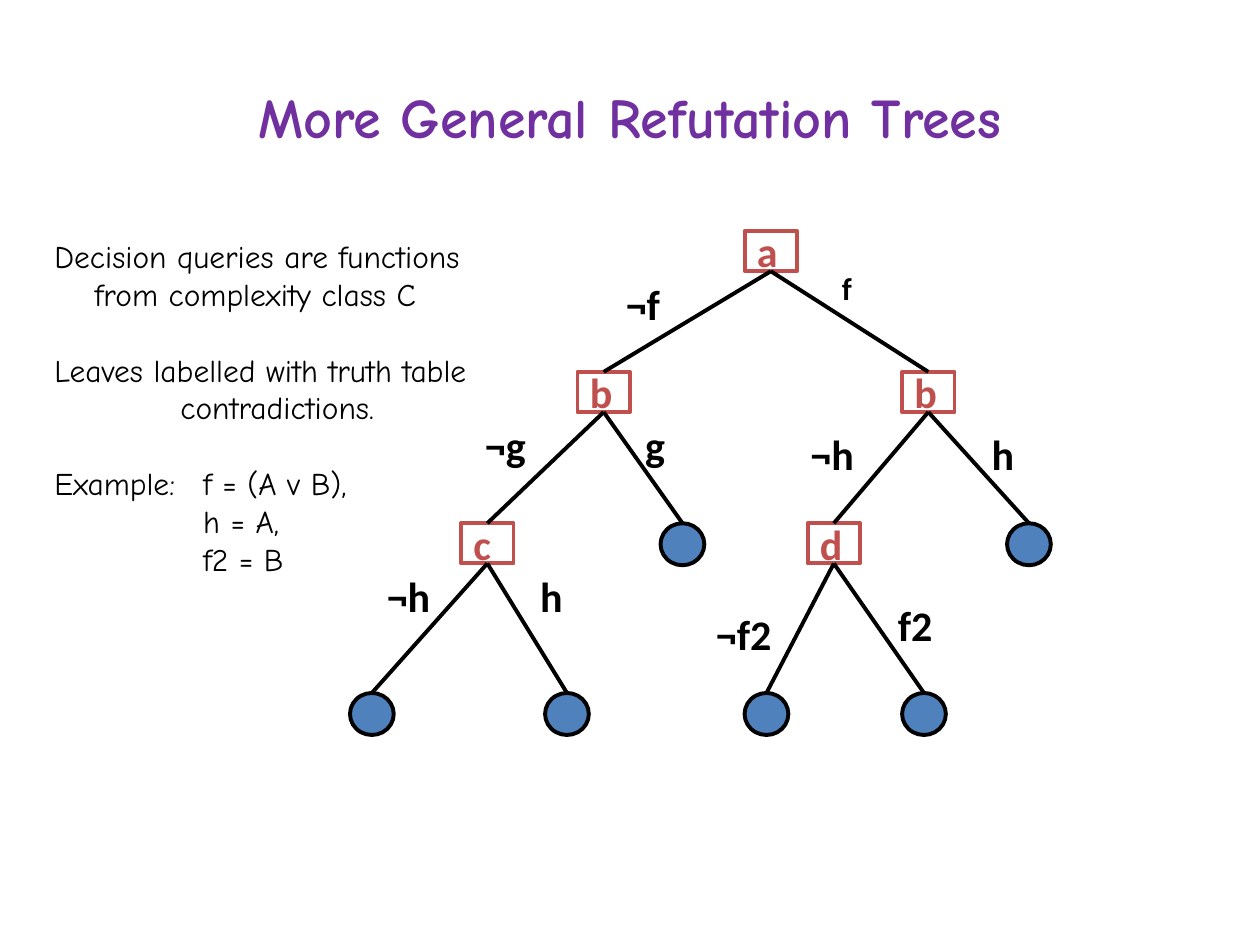
from pptx import Presentation
from pptx.dml.color import RGBColor
from pptx.enum.shapes import MSO_CONNECTOR, MSO_SHAPE
from pptx.enum.text import MSO_ANCHOR, PP_ALIGN
from pptx.oxml.ns import qn
from pptx.util import Pt
from lxml.etree import SubElement

BLACK, RED, BLUE, PURPLE, WHITE = "000000", "C0504D", "4F81BD", "7030A0", "FFFFFF"
HEADING, BODY = "Comic Neue", "Calibri"
LINE_WIDTH = 2.25
QUERY_SIZE, LEAF_SIZE = (30, 23), (25, 24)
LEVEL_TOPS = [132, 212.5, 299, 396]

TITLE = "More General Refutation Trees"

# text, left margin, first-line indent, space before
NOTES = [
    ("Decision queries are functions", 0, 0, 0),
    ("from complexity class C", 23, 0, 0),
    ("Leaves labelled with truth table", 0, 0, 21.6),
    ("contradictions.", 72, 0, 0),
    ("Example:\tf = (A v B),", 85, -85, 21.6),
    ("h = A,", 85, 0, 0),
    ("f2 = B", 85, 0, 0),
]

# name: (level, centre x, query; leaves have none)
NODES = {
    "root": (0, 440.5, "a"),
    "left": (1, 345, "b"),
    "right": (1, 530.5, "b"),
    "left-left": (2, 278.5, "c"),
    "left-right": (2, 390, None),
    "right-left": (2, 476.5, "d"),
    "right-right": (2, 588, None),
    "leaf 1": (3, 212.5, None),
    "leaf 2": (3, 324, None),
    "leaf 3": (3, 438, None),
    "leaf 4": (3, 528, None),
}

# parent, child, label, label left, top, width, height, font size
EDGES = [
    ("root", "left", "¬f", 350.5, 155.5, 40, 36.5, 24),
    ("root", "right", "f", 474, 150, 42, 29, 18),
    ("left", "left-left", "¬g", 270, 236, 43, 36.5, 24),
    ("left", "left-right", "g", 361.5, 236, 26, 36.5, 24),
    ("right", "right-left", "¬h", 456, 241, 50, 36.5, 24),
    ("right", "right-right", "h", 559.5, 241, 27, 36.5, 24),
    ("left-left", "leaf 1", "¬h", 214, 322, 45, 36.5, 24),
    ("left-left", "leaf 2", "h", 301.5, 322, 27, 36.5, 24),
    ("right-left", "leaf 3", "¬f2", 402, 344, 52, 36.5, 24),
    ("right-left", "leaf 4", "f2", 506, 338.5, 35, 36.5, 24),
]


def rgb(color):
    return RGBColor.from_string(color)


def format_runs(p, font, size, color, bold=True):
    for r in p.runs:
        r.font.name, r.font.size, r.font.bold = font, Pt(size), bold
        r.font.color.rgb = rgb(color)


def set_label(shape, text, size, color):
    tf = shape.text_frame
    tf.word_wrap = False
    tf.vertical_anchor = MSO_ANCHOR.MIDDLE
    p = tf.paragraphs[0]
    p.text = text
    p.alignment = PP_ALIGN.LEFT
    format_runs(p, BODY, size, color)


def add_title(slide):
    title = slide.shapes.title
    title.left, title.top, title.width, title.height = Pt(36), Pt(21.6), Pt(648), Pt(90)
    title.text_frame.text = TITLE
    title.text_frame.vertical_anchor = MSO_ANCHOR.MIDDLE
    p = title.text_frame.paragraphs[0]
    p.alignment = PP_ALIGN.CENTER
    format_runs(p, HEADING, 32, PURPLE)


def add_notes(slide):
    tf = slide.shapes.add_textbox(Pt(24), Pt(132), Pt(285), Pt(247)).text_frame
    tf.word_wrap = True
    for i, (text, margin, indent, before) in enumerate(NOTES):
        p = tf.add_paragraph() if i else tf.paragraphs[0]
        p.text = text
        p.space_before = Pt(before)
        pPr = p._p.get_or_add_pPr()
        pPr.set("marL", str(Pt(margin)))
        pPr.set("indent", str(Pt(indent)))
        format_runs(p, HEADING, 18, BLACK, bold=False)


def add_node(slide, level, center, query):
    width, height = QUERY_SIZE if query else LEAF_SIZE
    kind = MSO_SHAPE.RECTANGLE if query else MSO_SHAPE.OVAL
    sp = slide.shapes.add_shape(kind, Pt(center - width / 2), Pt(LEVEL_TOPS[level]),
                                Pt(width), Pt(height))
    sp.shadow.inherit = False
    sp.fill.solid()
    sp.fill.fore_color.rgb = rgb(WHITE if query else BLUE)
    sp.line.color.rgb = rgb(RED if query else BLACK)
    sp.line.width = Pt(LINE_WIDTH)
    if query:
        set_label(sp, query, 24, RED)
    return sp


def add_edge(slide, parent, child):
    line = slide.shapes.add_connector(MSO_CONNECTOR.STRAIGHT, 0, 0, 0, 0)
    line.begin_connect(parent, 2 if parent.auto_shape_type == MSO_SHAPE.RECTANGLE else 4)
    line.end_connect(child, 0)
    line.line.color.rgb = rgb(BLACK)
    line.line.width = Pt(LINE_WIDTH)
    SubElement(line._element.spPr, qn("a:effectLst"))


def main():
    prs = Presentation()
    prs.slide_width, prs.slide_height = Pt(720), Pt(540)
    slide = prs.slides.add_slide(prs.slide_layouts[5])
    add_title(slide)
    add_notes(slide)
    nodes = {name: add_node(slide, *node) for name, node in NODES.items()}
    for parent, child, text, left, top, width, height, size in EDGES:
        add_edge(slide, nodes[parent], nodes[child])
        label = slide.shapes.add_textbox(Pt(left), Pt(top), Pt(width), Pt(height))
        set_label(label, text, size, BLACK)
    prs.save("out.pptx")


if __name__ == "__main__":
    main()
